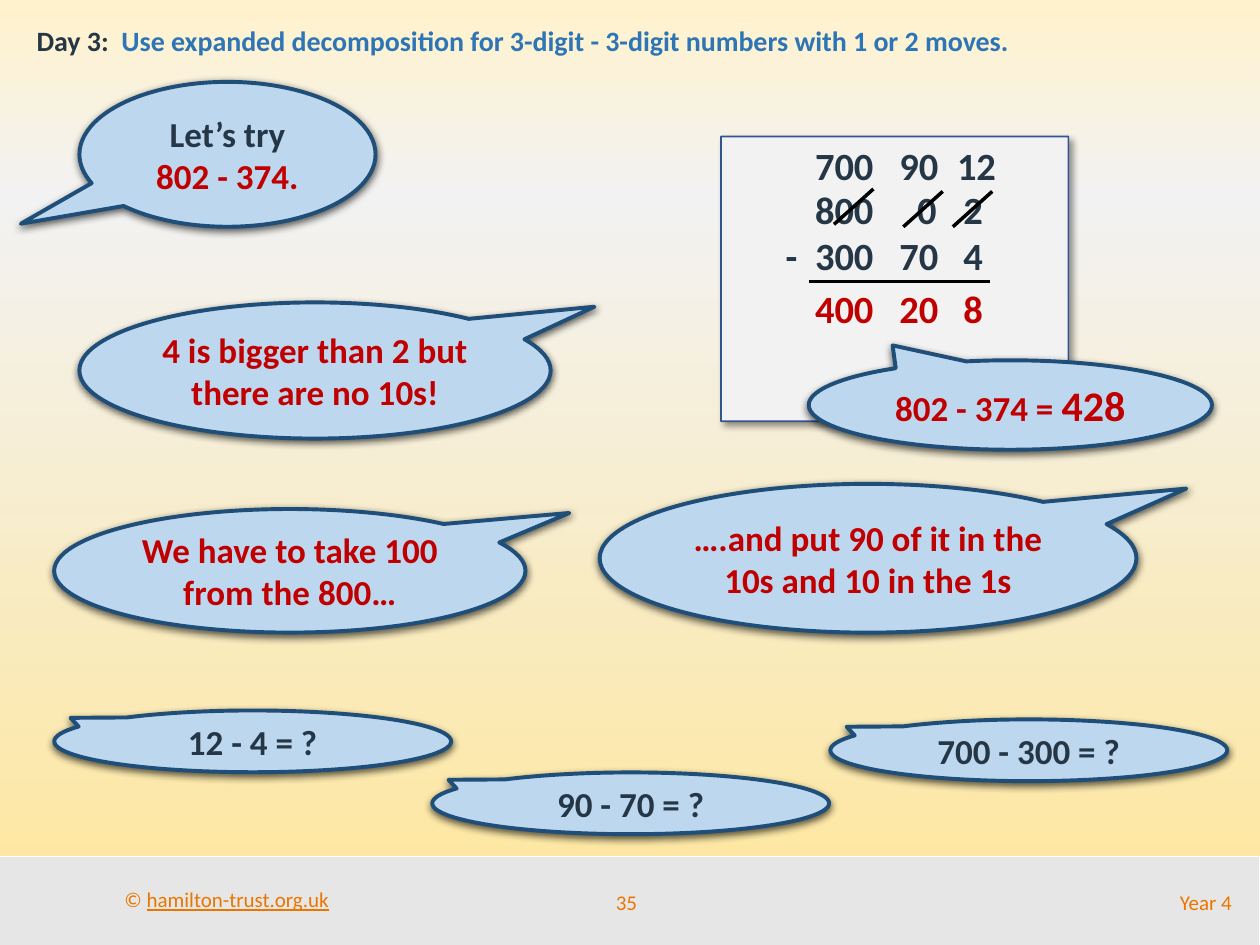
from dataclasses import dataclass
from typing import Any

import pptx
import pptx.util
import pptx.dml.color
import pptx.enum.shapes
import pptx.enum.text
import pptx.oxml
import pptx.oxml.ns
from lxml import etree

Pt = pptx.util.Pt
qn = pptx.oxml.ns.qn
ALIGN = pptx.enum.text.PP_ALIGN
ANCHOR = pptx.enum.text.MSO_ANCHOR
SHAPE = pptx.enum.shapes.MSO_SHAPE

COLORS = {
    "cream": "FFF2CC", "pale": "F2F2F2", "yellow": "FFE699",
    "band": "E7E6E6", "white": "FFFFFF", "orange": "EA7600",
    "ink": "253746", "blue": "2E75B6", "red": "C00000", "black": "000000",
    "card line": "325491", "bubble": "BDD7EE", "bubble line": "1F4E79",
}


@dataclass
class Run:
    text: str
    color: str
    size: float
    bold: bool = True
    underline: bool = False


@dataclass
class Shadow:
    alpha: int
    blur: float
    distance: float
    angle: int


@dataclass
class Bubble:
    box: tuple[float, float, float, float]
    tail: tuple[float, float]
    lines: list[list[Run]]


def rgb(name: str) -> Any:
    return pptx.dml.color.RGBColor.from_string(COLORS[name])


def write_runs(paragraph: Any, runs: list[Run], align: Any) -> None:
    paragraph.alignment = align
    for part in runs:
        run = paragraph.add_run()
        run.text = part.text
        style = {"name": "Calibri", "size": Pt(part.size), "bold": part.bold,
                 "underline": part.underline}
        for attribute, value in style.items():
            setattr(run.font, attribute, value)
        run.font.color.rgb = rgb(part.color)


def add_label(slide: Any, box: tuple, runs: list[Run], align: Any,
              anchor: Any = ANCHOR.TOP, wrap: bool = True) -> None:
    label = slide.shapes.add_textbox(*map(Pt, box))
    frame = label.text_frame
    frame.word_wrap = wrap
    frame.vertical_anchor = anchor
    write_runs(frame.paragraphs[0], runs, align)


def add_panel(slide: Any, kind: Any, box: tuple, fill: str, line: str,
              line_width: float, shadow: Shadow | None = None) -> Any:
    panel = slide.shapes.add_shape(kind, *map(Pt, box))
    panel.fill.solid()
    panel.fill.fore_color.rgb = rgb(fill)
    panel.line.color.rgb = rgb(line)
    panel.line.width = Pt(line_width)
    panel.shadow.inherit = False
    if shadow:
        effects = panel._element.spPr.find(qn("a:effectLst"))
        outer = etree.SubElement(
            effects, qn("a:outerShdw"), blurRad=str(Pt(shadow.blur)),
            dist=str(Pt(shadow.distance)), dir=str(shadow.angle * 60000),
            algn="ctr", rotWithShape="0")
        shade = etree.SubElement(outer, qn("a:srgbClr"), val=COLORS["black"])
        etree.SubElement(shade, qn("a:alpha"), val=str(shadow.alpha * 1000))
    return panel


def add_bubble(slide: Any, bubble: Bubble) -> None:
    callout = add_panel(slide, SHAPE.OVAL_CALLOUT, bubble.box, "bubble",
                        "bubble line", 2.25, Shadow(63, 4.5, 1.5, 90))
    for index, offset in enumerate(bubble.tail):
        callout.adjustments[index] = offset
    frame = callout.text_frame
    frame.word_wrap = True
    frame.vertical_anchor = ANCHOR.MIDDLE
    for index, runs in enumerate(bubble.lines):
        paragraph = frame.add_paragraph() if index else frame.paragraphs[0]
        write_runs(paragraph, runs, ALIGN.CENTER)


def add_stroke(slide: Any, x1: float, y1: float, x2: float, y2: float) -> None:
    stroke = slide.shapes.add_connector(
        pptx.enum.shapes.MSO_CONNECTOR.STRAIGHT, Pt(x1), Pt(y1), Pt(x2), Pt(y2))
    stroke.line.color.rgb = rgb("black")
    stroke.line.width = Pt(2)
    etree.SubElement(stroke._element.spPr, qn("a:effectLst"))


def set_background(slide: Any) -> None:
    fill = slide.background.fill
    fill.gradient()
    fill.gradient_angle = 270
    stops = next(slide._element.iter(qn("a:gsLst")))
    for stop in list(stops):
        stops.remove(stop)
    for percent, color in ((0, "cream"), (21, "pale"), (100, "yellow")):
        stop = etree.SubElement(stops, qn("a:gs"), pos=str(percent * 1000))
        etree.SubElement(stop, qn("a:srgbClr"), val=COLORS[color])


def set_title(slide: Any) -> None:
    title = slide.shapes.title
    place = {"left": Pt(13.7), "top": Pt(10), "width": Pt(687), "height": Pt(26.6)}
    for attribute, value in place.items():
        setattr(title, attribute, value)
    frame = title.text_frame
    frame.auto_size = pptx.enum.text.MSO_AUTO_SIZE.NONE
    frame.vertical_anchor = ANCHOR.TOP
    paragraph = frame.paragraphs[0]
    tabs = etree.SubElement(paragraph._p.get_or_add_pPr(), qn("a:tabLst"))
    etree.SubElement(tabs, qn("a:tab"), pos=str(Pt(48.5)), algn="l")
    write_runs(paragraph, [
        Run("Day 3:\t", "ink", 16),
        Run("Use expanded decomposition for 3-digit - 3-digit numbers "
            "with 1 or 2 moves.", "blue", 16)], ALIGN.LEFT)


def add_footer(slide: Any) -> None:
    add_panel(slide, SHAPE.RECTANGLE, (-4, 489.5, 724, 52), "band", "white", 1)
    add_label(slide, (64, 503.3, 132.5, 21.6),
              [Run("© ", "orange", 12, False),
               Run("hamilton-trust.org.uk", "orange", 12, False, True)],
              ALIGN.LEFT, wrap=False)
    for box, text, align in (((329.5, 501.3, 57, 28.8), "35", ALIGN.CENTER),
                             ((468, 501.3, 243, 28.8), "Year 4", ALIGN.RIGHT)):
        add_label(slide, box, [Run(text, "orange", 12, False)], align, ANCHOR.MIDDLE)


def add_subtraction(slide: Any) -> None:
    add_panel(slide, SHAPE.FOLDED_CORNER, (412, 78, 198.5, 162.7), "pale",
              "card line", 1, Shadow(40, 4, 3, 45))
    # Each row: top, colour, and numbers with their right edges
    sign, hundreds, tens, ones = 455.5, 499, 536, 561.5
    rows = [
        (77.8, "ink", {hundreds: "700", tens: "90", ones + 7.5: "12"}),
        (102.6, "ink", {hundreds: "800", tens - 1: "0", ones: "2"}),
        (129.3, "ink", {sign: "-", hundreds: "300", tens: "70", ones: "4"}),
        (159.1, "red", {hundreds: "400", tens: "20", ones: "8"}),
    ]
    cell_width, inset = 60, 7.2
    for top, color, numbers in rows:
        for right, text in numbers.items():
            add_label(slide, (right + inset - cell_width, top, cell_width, 34),
                      [Run(text, color, 22)], ALIGN.RIGHT)
    # Crossings-out and the answer rule
    for left, bottom in ((476.6, 128.2), (516.2, 129.6), (544.5, 129.6)):
        add_stroke(slide, left, bottom, left + 22.5, bottom - 20.2)
    add_stroke(slide, 462.2, 160.8, 566, 160.8)


def main() -> None:
    deck = pptx.Presentation()
    deck.slide_width, deck.slide_height = Pt(720), Pt(540)
    slide = deck.slides.add_slide(deck.slide_layouts[5])
    set_background(slide)
    set_title(slide)
    add_footer(slide)
    add_subtraction(slide)

    # Speech bubbles
    up_right, up_left = (0.593, -0.468), (-0.459, -0.381)
    bubbles = [
        Bubble((45.4, 172.8, 269.3, 77.8), up_right,
               [[Run("4 is bigger than 2 but there are no 10s!", "red", 20)]]),
        Bubble((342.7, 276.5, 306.7, 85), up_right,
               [[Run("….and put 90 of it in the 10s and 10 in the 1s", "red", 20)]]),
        Bubble((462.2, 205.9, 230.4, 51.1), (-0.292, -0.667),
               [[Run("802 - 374 = ", "red", 20), Run("428", "red", 24)]]),
        Bubble((45.4, 46.8, 169.2, 82.8), (-0.698, 0.479),
               [[Run("Let’s try", "ink", 20)], [Run("802 - 374.", "red", 20)]]),
        Bubble((31, 290.9, 269.3, 70.6), up_right,
               [[Run("We have to take 100 from the 800…", "red", 20)]]),
    ]
    for left, top, question in ((31, 406, "12 - 4 = ?"), (247, 441.4, "90 - 70 = ?"),
                                (474.5, 411.1, "700 - 300 = ?")):
        bubbles.append(Bubble((left, top, 226.8, 35.3), up_left,
                              [[Run(question, "ink", 20)]]))
    for bubble in bubbles:
        add_bubble(slide, bubble)
    deck.save("out.pptx")


if __name__ == "__main__":
    main()
